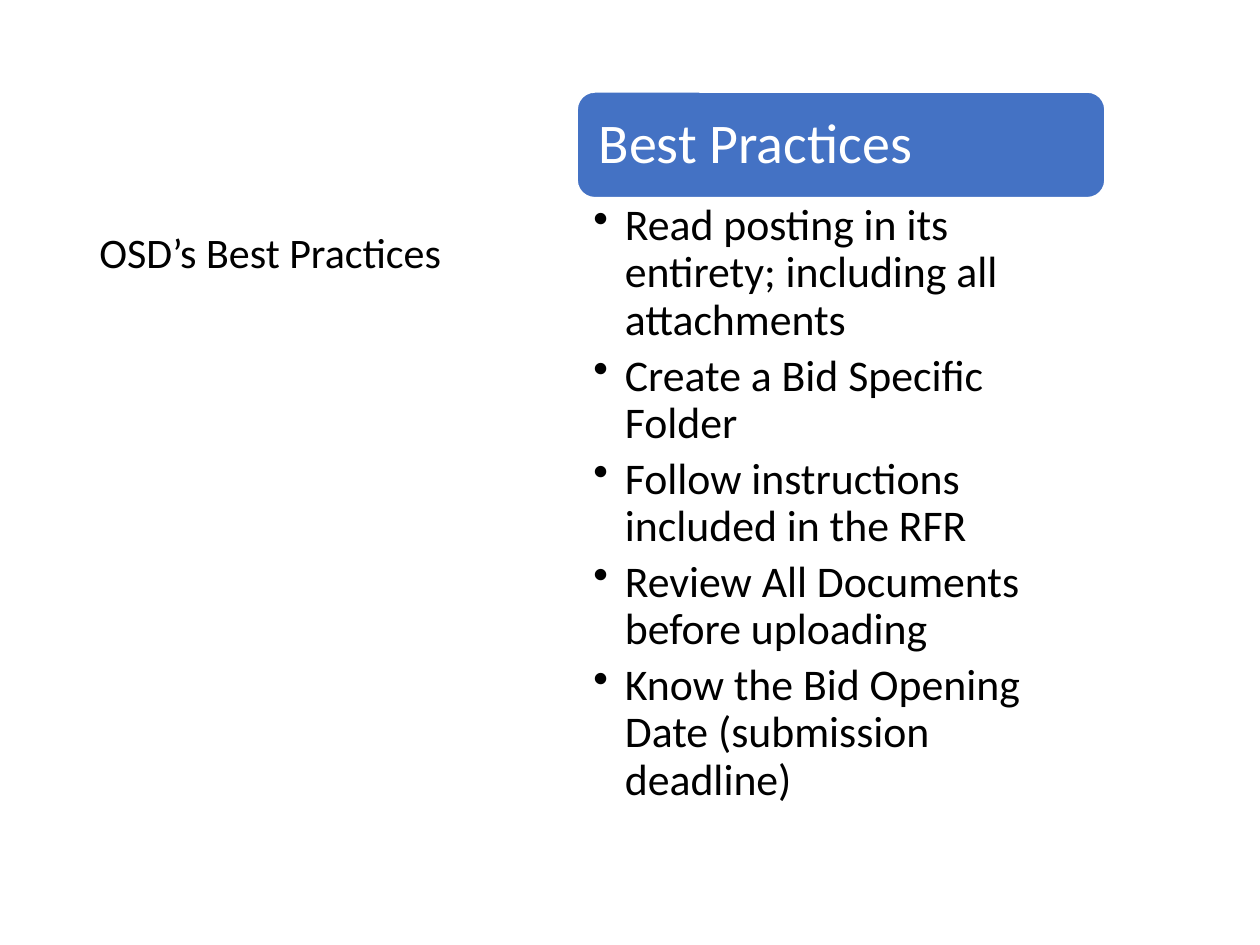
from dataclasses import dataclass

from lxml import etree
from pptx import Presentation
from pptx.dml.color import RGBColor
from pptx.enum.shapes import MSO_SHAPE
from pptx.enum.text import MSO_ANCHOR, PP_ALIGN
from pptx.oxml.ns import qn
from pptx.util import Inches, Pt

ROUND_RECT = MSO_SHAPE.ROUNDED_RECTANGLE
TOP, MIDDLE, BOTTOM = MSO_ANCHOR.TOP, MSO_ANCHOR.MIDDLE, MSO_ANCHOR.BOTTOM
LEFT = PP_ALIGN.LEFT


@dataclass(frozen=True)
class Theme:
    font: str = "Calibri"
    text: RGBColor = RGBColor(0x00, 0x00, 0x00)
    white: RGBColor = RGBColor(0xFF, 0xFF, 0xFF)
    accent: RGBColor = RGBColor(0x44, 0x72, 0xC4)
    title: Pt = Pt(24)
    banner: Pt = Pt(32)
    body: Pt = Pt(25)


theme = Theme()


def set_frame(sp, anchor, left, top, right, bottom):
    tf = sp.text_frame
    tf.word_wrap = True
    tf.vertical_anchor = anchor
    tf.margin_left, tf.margin_top = Inches(left), Inches(top)
    tf.margin_right, tf.margin_bottom = Inches(right), Inches(bottom)
    return tf


def write(p, text, size, color):
    p.alignment = LEFT
    p.line_spacing = 0.9
    r = p.add_run()
    r.text = text
    r.font.name = theme.font
    r.font.size = size
    r.font.color.rgb = color


prs = Presentation()
prs.slide_width, prs.slide_height = Inches(10), Inches(7.5)
s = prs.slides.add_slide(prs.slide_layouts[6])

# Title
sp = s.shapes.add_textbox(Inches(0.69), Inches(0.5), Inches(3.23), Inches(1.75))
tf = set_frame(sp, BOTTOM, 0.1, 0.05, 0.1, 0.05)
write(tf.paragraphs[0], "OSD’s Best Practices", theme.title, theme.text)

# Banner above the list
column_left, column_width = Inches(4.58), Inches(4.19)
sp = s.shapes.add_shape(ROUND_RECT, column_left, Inches(0.73), column_width, Inches(0.84))
sp.shadow.inherit = False
sp.fill.solid()
sp.fill.fore_color.rgb = theme.accent
sp.line.color.rgb = theme.white
sp.line.width = Pt(1)
tf = set_frame(sp, MIDDLE, 0.13, 0.13, 0.13, 0.13)
write(tf.paragraphs[0], "Best Practices", theme.banner, theme.white)

# Bulleted list
practices = [
    "Read posting in its entirety; including all attachments",
    "Create a Bid Specific Folder",
    "Follow instructions included in the RFR",
    "Review All Documents before uploading",
    "Know the Bid Opening Date (submission deadline)",
]
sp = s.shapes.add_textbox(column_left, Inches(1.57), column_width, Inches(5.07))
tf = set_frame(sp, TOP, 0.13, 0.04, 0.25, 0.04)
for i, practice in enumerate(practices):
    p = tf.paragraphs[0] if i == 0 else tf.add_paragraph()
    pPr = p._p.get_or_add_pPr()
    pPr.set("marL", str(Inches(0.25)))
    pPr.set("indent", str(-Inches(0.25)))
    etree.SubElement(pPr, qn("a:buChar"), char="•")
    p.space_after = Pt(5)
    write(p, practice, theme.body, theme.text)

prs.save("out.pptx")
